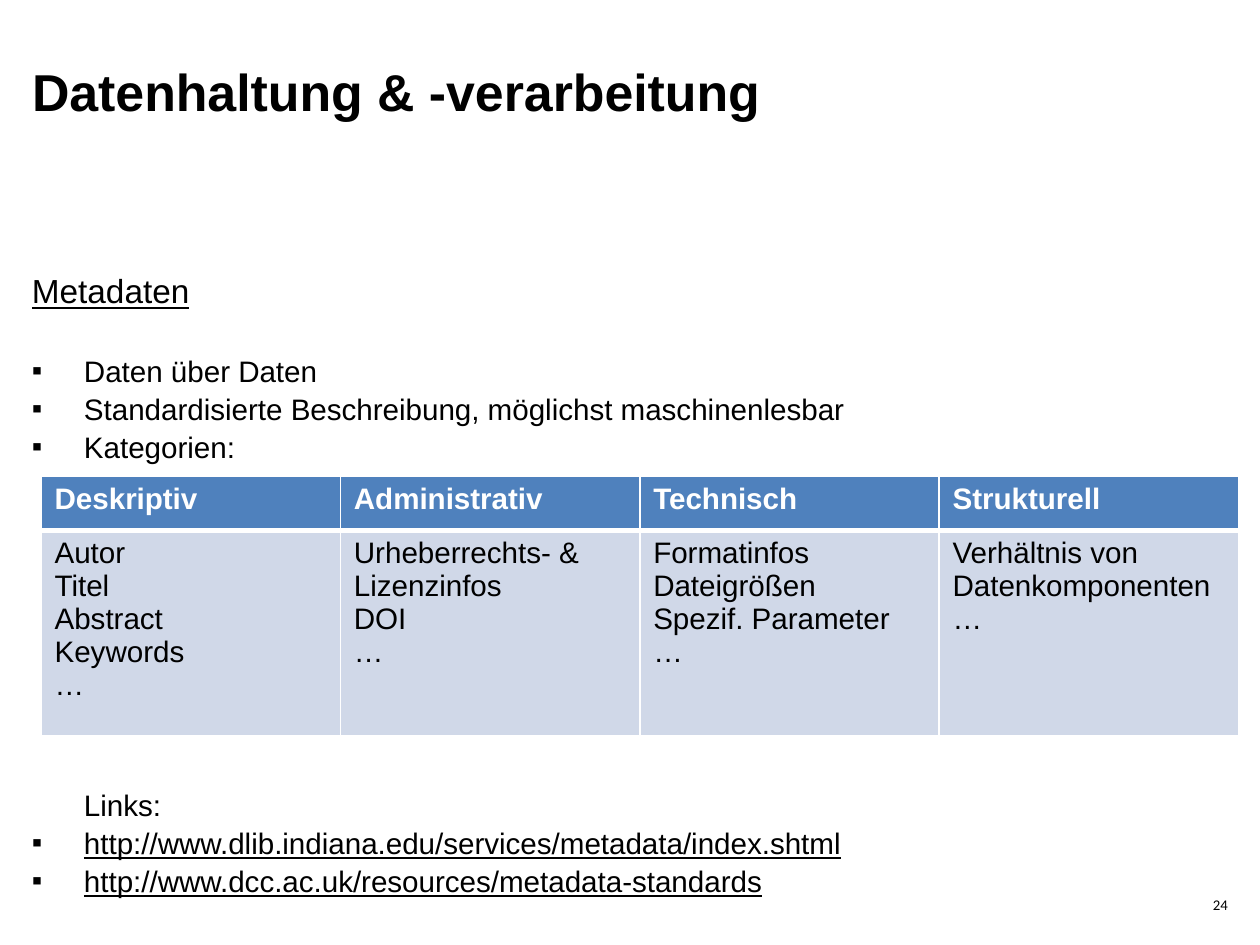
from dataclasses import dataclass

import lxml.etree
import pptx
import pptx.dml.color
import pptx.enum.text
import pptx.oxml.ns
import pptx.util
from pptx.util import Inches, Pt

COLORS = {"text": "000000", "header": "4F81BD", "cell": "D0D8E8", "white": "FFFFFF"}
TABLE_WIDTH = 8.98
ROW_HEIGHTS = (0.41, 1.54)


@dataclass
class Line:
    text: str
    size: float = 16
    bullet: bool = False
    underline: bool = False
    before: float = 0


@dataclass
class Category:
    heading: str
    entries: tuple[str, ...]


BODY = [
    Line("Metadaten", size=18, underline=True),
    Line("Daten über Daten", bullet=True, before=21.5),
    Line("Standardisierte Beschreibung, möglichst maschinenlesbar", bullet=True),
    Line("Kategorien:", bullet=True),
    Line("Links:", before=173),
    Line("http://www.dlib.indiana.edu/services/metadata/index.shtml", bullet=True, underline=True),
    Line("http://www.dcc.ac.uk/resources/metadata-standards", bullet=True, underline=True),
]

CATEGORIES = [
    Category("Deskriptiv", ("Autor", "Titel", "Abstract", "Keywords", "…")),
    Category("Administrativ", ("Urheberrechts- &", "Lizenzinfos", "DOI", "…")),
    Category("Technisch", ("Formatinfos", "Dateigrößen", "Spezif. Parameter", "…")),
    Category("Strukturell", ("Verhältnis von", "Datenkomponenten", "…")),
]


def rgb(name: str) -> pptx.dml.color.RGBColor:
    return pptx.dml.color.RGBColor.from_string(COLORS[name])


def add_element(parent, tag: str, **attributes: str):
    return lxml.etree.SubElement(parent, pptx.oxml.ns.qn(tag), attributes)


def style(paragraph, size: float, color: str = "text", bold: bool = False, font: str = "Arial") -> None:
    paragraph.font.name = font
    paragraph.font.size = Pt(size)
    paragraph.font.bold = bold
    paragraph.font.color.rgb = rgb(color)


def prepare_frame(frame, anchor=pptx.enum.text.MSO_ANCHOR.TOP):
    """Wrap the text and remove the insets."""
    frame.word_wrap = True
    frame.auto_size = pptx.enum.text.MSO_AUTO_SIZE.NONE
    frame.vertical_anchor = anchor
    frame.margin_left = frame.margin_right = frame.margin_top = frame.margin_bottom = 0
    return frame


def add_title(slide) -> None:
    title = slide.shapes.title
    title.left, title.top = Inches(0.24), Inches(0.51)
    title.width, title.height = Inches(6.58), Inches(1.18)
    prepare_frame(title.text_frame).text = "Datenhaltung & -verarbeitung"
    paragraph = title.text_frame.paragraphs[0]
    paragraph.alignment = pptx.enum.text.PP_ALIGN.LEFT
    paragraph.line_spacing = Pt(29)
    style(paragraph, 28, bold=True)


def add_body(slide) -> None:
    box = slide.shapes.add_textbox(Inches(0.24), Inches(2.01), Inches(8.97), Inches(4.92))
    frame = prepare_frame(box.text_frame)
    for index, line in enumerate(BODY):
        paragraph = frame.add_paragraph() if index else frame.paragraphs[0]
        paragraph.text = line.text
        paragraph.line_spacing = 1.07
        if line.before:
            paragraph.space_before = Pt(line.before)
        properties = paragraph._p.get_or_add_pPr()
        if index:
            properties.set("marL", str(Inches(0.39)))
        if line.bullet:
            properties.set("indent", str(-Inches(0.39)))
            add_element(properties, "a:buFont", typeface="Arial")
            add_element(properties, "a:buChar", char="▪")
        style(paragraph, line.size)
        paragraph.font.underline = line.underline


def add_slide_number(slide) -> None:
    box = slide.shapes.add_textbox(Inches(6.77), Inches(6.69), Inches(2.44), Inches(0.16))
    frame = prepare_frame(box.text_frame, pptx.enum.text.MSO_ANCHOR.BOTTOM)
    frame.text = "24"
    frame.paragraphs[0].alignment = pptx.enum.text.PP_ALIGN.RIGHT
    style(frame.paragraphs[0], 8, font="Calibri")


def fill_cell(cell, lines: tuple[str, ...], is_header: bool) -> None:
    cell.text = "\n".join(lines)
    for paragraph in cell.text_frame.paragraphs:
        style(paragraph, 16, "white" if is_header else "text", bold=is_header)
    properties = cell._tc.get_or_add_tcPr()
    for side in "LRTB":
        thick = (is_header and side == "B") or (not is_header and side == "T")
        border = add_element(properties, f"a:ln{side}", w=str(Pt(3 if thick else 1)))
        add_element(add_element(border, "a:solidFill"), "a:srgbClr", val=COLORS["white"])
    cell.fill.solid()
    cell.fill.fore_color.rgb = rgb("header" if is_header else "cell")


def add_category_table(slide) -> None:
    table = slide.shapes.add_table(
        len(ROW_HEIGHTS), len(CATEGORIES), Inches(0.31), Inches(3.57),
        Inches(TABLE_WIDTH), Inches(sum(ROW_HEIGHTS)),
    ).table
    table.horz_banding = False
    for row, height in zip(table.rows, ROW_HEIGHTS):
        row.height = Inches(height)
    for column, category in enumerate(CATEGORIES):
        fill_cell(table.cell(0, column), (category.heading,), True)
        fill_cell(table.cell(1, column), category.entries, False)


def main() -> None:
    presentation = pptx.Presentation()
    presentation.slide_width, presentation.slide_height = Inches(9.45), Inches(7.09)
    slide = presentation.slides.add_slide(presentation.slide_layouts.get_by_name("Title Only"))
    add_title(slide)
    add_slide_number(slide)
    add_body(slide)
    add_category_table(slide)
    presentation.save("out.pptx")


if __name__ == "__main__":
    main()
